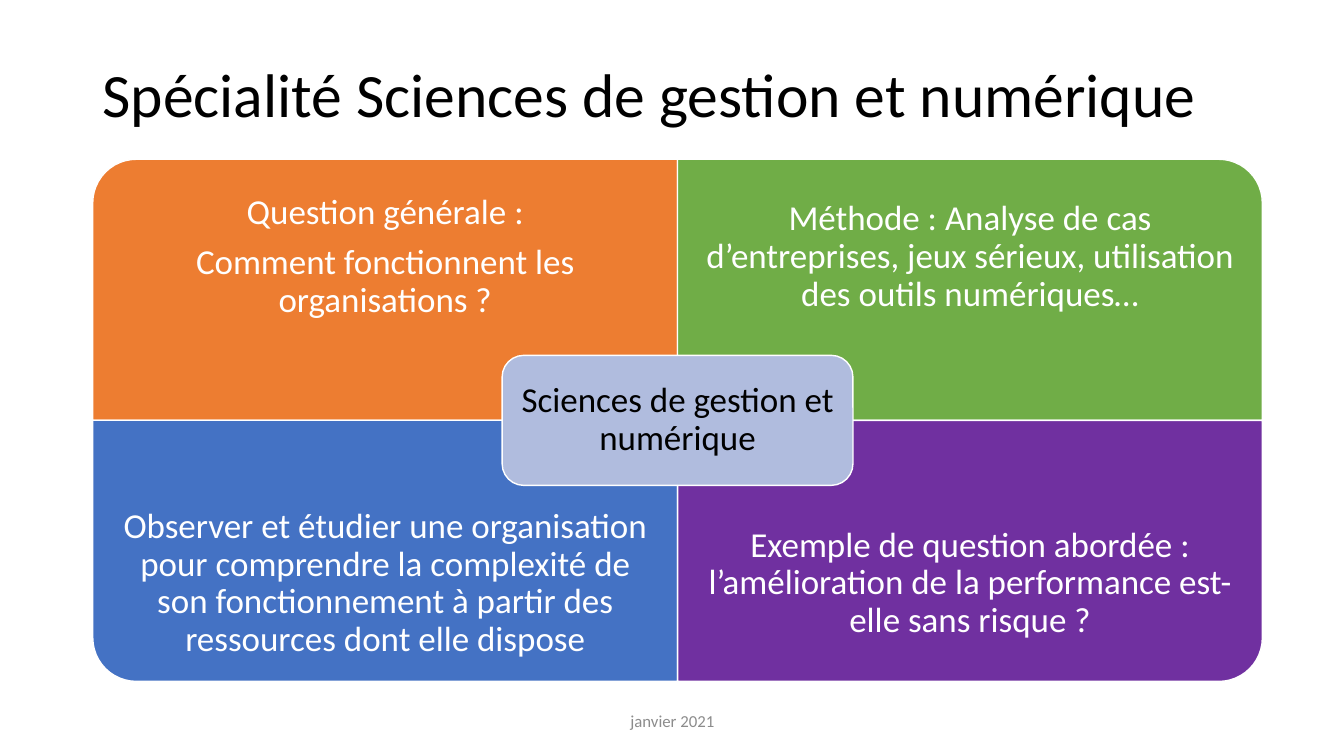
from pptx import Presentation
from pptx.dml.color import RGBColor
from pptx.enum.shapes import MSO_SHAPE
from pptx.enum.text import MSO_ANCHOR, PP_ALIGN
from pptx.util import Inches, Pt

ROUND = MSO_SHAPE.ROUNDED_RECTANGLE
CORNER = MSO_SHAPE.ROUND_1_RECTANGLE
MIDDLE = MSO_ANCHOR.MIDDLE
LEFT, CENTER = PP_ALIGN.LEFT, PP_ALIGN.CENTER

WHITE = RGBColor(0xFF, 0xFF, 0xFF)
BLACK = RGBColor(0x00, 0x00, 0x00)
GREY = RGBColor(0x8C, 0x8C, 0x8C)
ORANGE = RGBColor(0xED, 0x7D, 0x31)
GREEN = RGBColor(0x70, 0xAD, 0x47)
BLUE = RGBColor(0x44, 0x72, 0xC4)
PURPLE = RGBColor(0x70, 0x30, 0xA0)
PALE = RGBColor(0xB0, 0xBC, 0xDE)

GRID_X, GRID_Y = 0.92, 1.58
CELL_W, CELL_H = 5.8, 2.59
TEXT_H = 1.94
MID_X, MID_Y = GRID_X + CELL_W, GRID_Y + CELL_H
HUB_W, HUB_H = 3.48, 1.29

# column, row, turn of the rounded corner, fill, paragraphs
CELLS = [
    (0, 0, 270, ORANGE, ["Question générale :",
                         "Comment fonctionnent les organisations ?"]),
    (1, 0, 0, GREEN, ["Méthode : Analyse de cas d’entreprises, jeux sérieux, "
                      "utilisation des outils numériques…"]),
    (0, 1, 180, BLUE, ["Observer et étudier une organisation pour comprendre "
                       "la complexité de son fonctionnement à partir des "
                       "ressources dont elle dispose"]),
    (1, 1, 90, PURPLE, ["Exemple de question abordée : l’amélioration de la "
                        "performance est-elle sans risque ?"]),
]


class Board:
    def __init__(self, slide, font="Calibri"):
        self.slide = slide
        self.font = font

    def block(self, kind, x, y, w, h, fill, turn=0):
        """Draw a filled shape that covers the given box after its turn."""
        if turn % 180:
            x, y, w, h = x + (w - h) / 2, y + (h - w) / 2, h, w
        shape = self.slide.shapes.add_shape(
            kind, Inches(x), Inches(y), Inches(w), Inches(h))
        shape.rotation = turn
        shape.shadow.inherit = False
        shape.fill.solid()
        shape.fill.fore_color.rgb = fill
        shape.line.color.rgb = WHITE
        shape.line.width = Pt(1)

    def text(self, x, y, w, h, lines, size, color, align=CENTER,
             pad=(0.1, 0.05), pitch=0.9, after=0):
        box = self.slide.shapes.add_textbox(
            Inches(x), Inches(y), Inches(w), Inches(h))
        frame = box.text_frame
        frame.word_wrap = True
        frame.vertical_anchor = MIDDLE
        frame.margin_left = frame.margin_right = Inches(pad[0])
        frame.margin_top = frame.margin_bottom = Inches(pad[1])
        for i, line in enumerate(lines):
            para = frame.add_paragraph() if i else frame.paragraphs[0]
            para.alignment = align
            para.line_spacing = pitch
            para.space_after = Pt(after)
            run = para.add_run()
            run.text = line
            run.font.name = self.font
            run.font.size = Pt(size)
            run.font.color.rgb = color

    def cell(self, col, row, turn, fill, lines):
        x, y = GRID_X + col * CELL_W, GRID_Y + row * CELL_H
        self.block(CORNER, x, y, CELL_W, CELL_H, fill, turn)
        top = y + row * (CELL_H - TEXT_H)
        self.text(x, top, CELL_W, TEXT_H, lines, 25, WHITE,
                  pad=(0.19, 0.19), after=8.75)

    def hub(self, line):
        x, y = MID_X - HUB_W / 2, MID_Y - HUB_H / 2
        self.block(ROUND, x, y, HUB_W, HUB_H, PALE)
        self.text(x + 0.06, y + 0.06, HUB_W - 0.12, HUB_H - 0.12, [line],
                  25, BLACK, pad=(0.1, 0.1), after=8.75)


def main():
    deck = Presentation()
    deck.slide_width, deck.slide_height = Inches(13.33), Inches(7.5)
    board = Board(deck.slides.add_slide(deck.slide_layouts[6]))
    board.text(0.92, 0.24, 11.5, 1.45,
               ["Spécialité Sciences de gestion et numérique"],
               44, BLACK, LEFT)
    for cell in CELLS:
        board.cell(*cell)
    board.hub("Sciences de gestion et numérique")
    board.text(4.42, 6.95, 4.5, 0.4, ["janvier 2021"], 12, GREY, pitch=1.0)
    deck.save("out.pptx")


if __name__ == "__main__":
    main()
